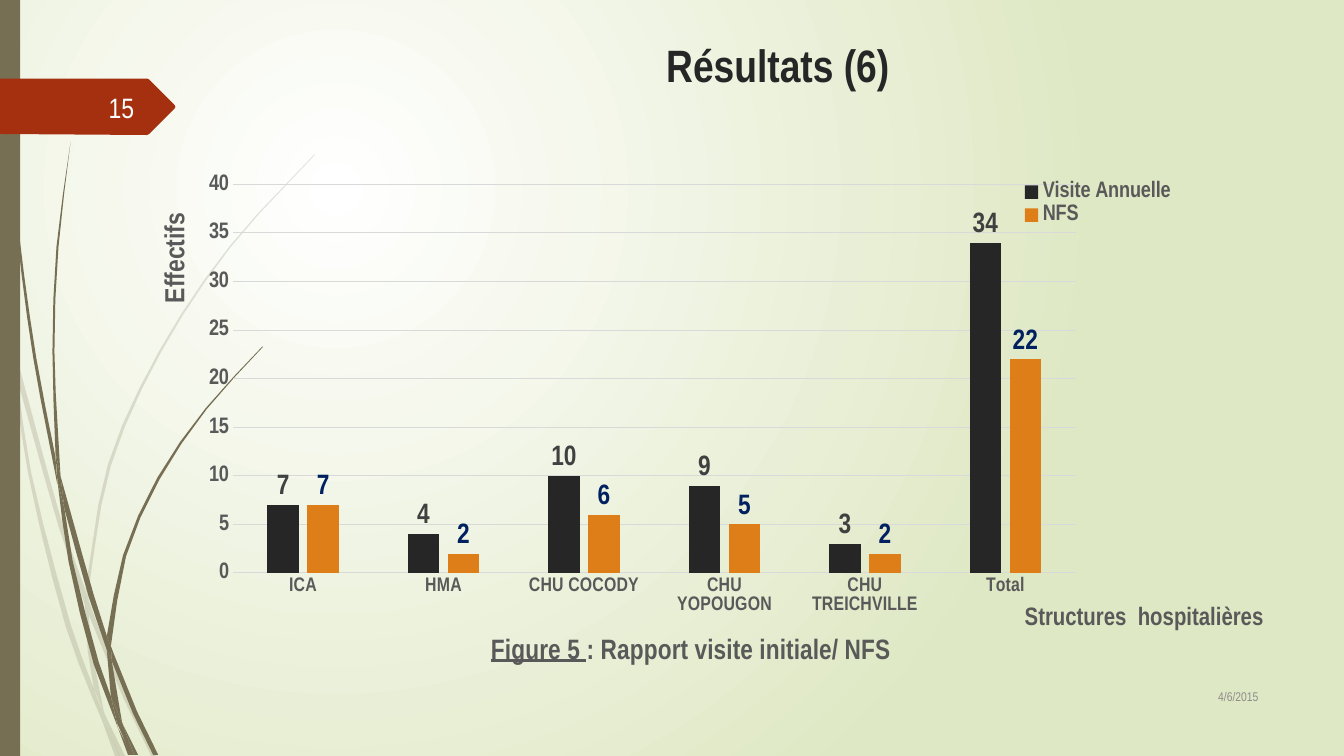
from dataclasses import dataclass
from math import hypot

from lxml import etree
from pptx import Presentation
from pptx import util as u
from pptx.chart import data as cd
from pptx.dml.color import RGBColor
from pptx.enum import chart as ch, shapes, text
from pptx.oxml import ns

FONT = "Arial Narrow"
WHITE = RGBColor(0xFF, 0xFF, 0xFF)
PALE_GREEN = RGBColor(0xDF, 0xE8, 0xC4)
OLIVE = RGBColor(0x76, 0x6F, 0x54)
RED = RGBColor(0xA5, 0x30, 0x10)
INK = RGBColor(0x26, 0x26, 0x26)
ORANGE = RGBColor(0xDE, 0x7E, 0x18)
NAVY = RGBColor(0x00, 0x20, 0x60)
DARK_GREY = RGBColor(0x40, 0x40, 0x40)
GREY = RGBColor(0x59, 0x59, 0x59)
DATE_GREY = RGBColor(0x8C, 0x8C, 0x8C)
GRID = RGBColor(0xD9, 0xD9, 0xD9)

Points = list[tuple[float, float]]


@dataclass
class Strand:
    """A blade of grass: one edge going out, the other coming back."""
    out: Points
    back: Points


@dataclass
class Label:
    text: str
    box: tuple[float, float, float, float]
    size: float
    color: RGBColor
    bold: bool
    align: text.PP_ALIGN
    anchor: text.MSO_ANCHOR
    top_inset: float = 0.05


@dataclass
class BarSeries:
    name: str
    values: tuple[int, ...]
    fill: RGBColor
    label: RGBColor


PALE_STRANDS = [
    Strand([(0.11, 3.5), (0.09, 3.22), (0, 2.82)], [(0, 2.99), (0.1, 3.44)]),
    Strand([(0.17, 3.76), (0.58, 5.22), (0.84, 5.99)], [(0.85, 5.86), (0.62, 5.2), (0.14, 3.45)]),
    Strand([(0.88, 6.1), (1.23, 6.94), (1.5, 7.5)],
           [(1.55, 7.5), (1.27, 6.92), (0.92, 6.07), (0.88, 5.96)]),
    Strand([(1.19, 7.5)], [(1.24, 7.5), (1.05, 7.11)]),
    Strand([(0.11, 3.5), (0.28, 4.7), (0.65, 6.21), (0.92, 6.93), (1.01, 7.14)],
           [(0.93, 6.83), (0.7, 6.19), (0.31, 4.69), (0.17, 3.76)]),
    Strand([(0.84, 5.99), (0.87, 6.46), (0.93, 6.83), (1.05, 7.11)],
           [(1.03, 7.06), (0.91, 6.46), (0.88, 6.1)]),
    Strand([(0.88, 5.96), (0.88, 5.84), (1.1, 4.62), (1.6, 3.49), (2.29, 2.45), (3.12, 1.54)],
           [(3.12, 1.53), (2.28, 2.44), (1.58, 3.48), (1.07, 4.61), (0.85, 5.84)]),
    Strand([(1.01, 7.14), (1.14, 7.5)], [(1.19, 7.5)]),
    Strand([(0.84, 5.99), (0.88, 6.1)], [(0.88, 5.96), (0.85, 5.86)]),
    Strand([(0.93, 6.83), (1.01, 7.14), (1.19, 7.5)], [(1.05, 7.11), (0.96, 6.92)]),
]
DARK_STRANDS = [
    Strand([(0.03, 0), (0.07, 1.1), (0.17, 2.33), (0.33, 3.55), (0.57, 4.81)],
           [(0.55, 4.53), (0.36, 3.55), (0.19, 2.32), (0.08, 1.09), (0.04, 0)]),
    Strand([(0.64, 5.05), (0.88, 5.92), (1.06, 6.45)], [(1.06, 6.31), (0.93, 5.9), (0.6, 4.72)]),
    Strand([(1.1, 6.41), (1.11, 6.56), (1.32, 7.08), (1.52, 7.49)],
           [(1.57, 7.49), (1.36, 7.06), (1.13, 6.49)]),
    Strand([(0.57, 4.77), (0.68, 5.57), (0.93, 6.59), (1.17, 7.22)],
           [(1.1, 6.91), (0.98, 6.57), (0.72, 5.56), (0.64, 5.05)]),
    Strand([(0.6, 4.72), (0.54, 3.49), (0.58, 2.45), (0.7, 1.41)],
           [(0.7, 1.41), (0.56, 2.45), (0.52, 3.49), (0.55, 4.49)]),
    Strand([(1.33, 7.49)], [(1.37, 7.49), (1.22, 7.19)]),
    Strand([(0.57, 4.77), (0.64, 5.05)], [(0.6, 4.72), (0.55, 4.49)]),
    Strand([(1.1, 6.41), (1.25, 5.52), (1.58, 4.76), (2.05, 4.06), (2.61, 3.44)],
           [(2.6, 3.44), (2.04, 4.05), (1.56, 4.74), (1.22, 5.51), (1.06, 6.31)]),
    Strand([(1.17, 7.22), (1.27, 7.49)], [(1.31, 7.49)]),
    Strand([(1.06, 6.45), (1.1, 6.91), (1.22, 7.19)], [(1.21, 7.16), (1.11, 6.56)]),
    Strand([(1.06, 6.45), (1.11, 6.56)], [(1.1, 6.41), (1.06, 6.31)]),
    Strand([(1.1, 6.91), (1.16, 7.17), (1.3, 7.49)], [(1.33, 7.49), (1.22, 7.19)]),
]
TAG = [(0, 0.78), (1.46, 0.78), (1.48, 0.79), (1.73, 1.04), (1.74, 1.06), (1.73, 1.08),
       (1.48, 1.33), (1.46, 1.34), (0, 1.33)]
LABELS = [
    Label("Résultats (6)", (2.84, 0.28, 9.75, 0.58), 32.4, INK, True,
          text.PP_ALIGN.CENTER, text.MSO_ANCHOR.TOP, 0.09),
    Label("4/6/2015", (11.33, 6.7, 1.25, 0.41), 9, DATE_GREY, False,
          text.PP_ALIGN.RIGHT, text.MSO_ANCHOR.MIDDLE),
    Label("15", (0.58, 0.86, 0.85, 0.4), 20, WHITE, False,
          text.PP_ALIGN.RIGHT, text.MSO_ANCHOR.MIDDLE),
]
HOSPITALS = ["ICA", "HMA", "CHU COCODY", "CHU YOPOUGON", "CHU TREICHVILLE", "Total"]
SERIES = [BarSeries("Visite Annuelle", (7, 4, 10, 9, 3, 34), INK, DARK_GREY),
          BarSeries("NFS", (7, 2, 6, 5, 2, 22), ORANGE, NAVY)]


def assign(obj, **values) -> None:
    for name, value in values.items():
        setattr(obj, name, value)


def style(font, size: float, color: RGBColor, bold: bool = True) -> None:
    assign(font, name=FONT, size=u.Pt(size), bold=bold)
    font.color.rgb = color


def smooth(pts: Points, step: float = 0.45) -> Points:
    """Run a smooth curve through the points, with more steps on longer spans."""
    slopes = []
    for i in range(len(pts)):
        (ax, ay), (bx, by) = pts[max(i - 1, 0)], pts[min(i + 1, len(pts) - 1)]
        span = hypot(bx - ax, by - ay) or 1
        slopes.append(((bx - ax) / span, (by - ay) / span))
    curve = [pts[0]]
    for p, q, m, n in zip(pts, pts[1:], slopes, slopes[1:]):
        size = hypot(q[0] - p[0], q[1] - p[1])
        steps = max(1, round(size / step))
        for t in (k / steps for k in range(1, steps + 1)):
            h = 3 * t**2 - 2 * t**3
            g, k = size * (t**3 - 2 * t**2 + t), size * (t**3 - t**2)
            curve.append(tuple(p[d] * (1 - h) + q[d] * h + m[d] * g + n[d] * k for d in (0, 1)))
    return curve


def paint(sp, color: RGBColor, alpha: int = 100) -> None:
    sp.shadow.inherit = False
    sp.fill.solid()
    sp.fill.fore_color.rgb = color
    sp.line.fill.background()
    if alpha < 100:
        rgb = sp._element.spPr.find(".//" + ns.qn("a:srgbClr"))
        etree.SubElement(rgb, ns.qn("a:alpha"), val=str(alpha * 1000))


def add_outline(parent, pts: Points, color: RGBColor, alpha: int = 100) -> None:
    emu = [(u.Inches(x), u.Inches(y)) for x, y in pts]
    builder = parent.build_freeform(*emu[0])
    builder.add_line_segments(emu[1:], close=True)
    paint(builder.convert_to_shape(), color, alpha)


def add_label(slide, label: Label) -> None:
    tf = slide.shapes.add_textbox(*map(u.Inches, label.box)).text_frame
    assign(tf, word_wrap=True, vertical_anchor=label.anchor, margin_top=u.Inches(label.top_inset))
    p = tf.paragraphs[0]
    p.alignment = label.align
    r = p.add_run()
    r.text = label.text
    style(r.font, label.size, label.color, label.bold)


def place(element, **layout: float) -> None:
    """Give a chart part a fixed layout, in fractions of the chart."""
    for old in element.findall(ns.qn("c:layout")):
        element.remove(old)
    box = etree.Element(ns.qn("c:layout"))
    manual = etree.SubElement(box, ns.qn("c:manualLayout"))
    overlay = element.find(ns.qn("c:overlay"))
    if overlay is None:
        etree.SubElement(manual, ns.qn("c:layoutTarget"), val="inner")
    for tag in ("xMode", "yMode"):
        etree.SubElement(manual, ns.qn("c:" + tag), val="edge")
    for tag, value in layout.items():
        etree.SubElement(manual, ns.qn("c:" + tag), val=str(value))
    (element[0] if overlay is None else overlay).addprevious(box)


def add_title(title, words: list[str], size: float, x: float, y: float, turn: int = 0) -> None:
    tf = title.text_frame
    tf._txBody.bodyPr.set("rot", str(turn * 60000))
    for i, word in enumerate(words):
        r = tf.paragraphs[0].add_run()
        r.text = word
        style(r.font, size, GREY)
        if i < len(words) - 1:
            r.font.underline = True
    place(title._element, x=x, y=y)


def add_visits_chart(slide) -> None:
    data = cd.CategoryChartData()
    data.categories = HOSPITALS
    for s in SERIES:
        data.add_series(s.name, s.values)
    box = map(u.Inches, (1.43, 1.45, 11.15, 5.43))
    chart = slide.shapes.add_chart(ch.XL_CHART_TYPE.COLUMN_CLUSTERED, *box, data).chart
    style(chart.font, 10, GREY, False)
    plot = chart.plots[0]
    assign(plot, gap_width=219, overlap=-27, vary_by_categories=False)
    for bars, s in zip(plot.series, SERIES):
        bars.format.fill.solid()
        bars.format.fill.fore_color.rgb = s.fill
        assign(bars.data_labels, show_value=True, position=ch.XL_LABEL_POSITION.OUTSIDE_END)
        style(bars.data_labels.font, 20, s.label)
    # Axes
    cat, val = chart.category_axis, chart.value_axis
    assign(val, minimum_scale=0, maximum_scale=40, major_unit=5)
    for axis, size in ((cat, 14), (val, 16)):
        axis.major_tick_mark = ch.XL_TICK_MARK.NONE
        style(axis.tick_labels.font, size, GREY)
    for line in (cat.format.line, val.major_gridlines.format.line):
        line.color.rgb, line.width = GRID, u.Pt(0.75)
    val.format.line.fill.background()
    # Titles, legend and plot area
    add_title(chart.chart_title, ["Figure 5 ", ": Rapport visite initiale/ NFS"], 20, 0.31, 0.89)
    add_title(cat.axis_title, ["Structures  hospitalières"], 18, 0.79, 0.83)
    add_title(val.axis_title, ["Effectifs"], 20, 0.01, 0.11, -90)
    chart.has_legend = True
    assign(chart.legend, position=ch.XL_LEGEND_POSITION.BOTTOM, include_in_layout=False)
    style(chart.legend.font, 16, GREY)
    place(chart.legend._element, x=0.79, y=0.06, w=0.14, h=0.09)
    place(chart._chartSpace.chart.plotArea, x=0.08, y=0.07, w=0.76, h=0.71)


def main() -> None:
    prs = Presentation()
    assign(prs, slide_width=u.Inches(13.33), slide_height=u.Inches(7.5))
    slide = prs.slides.add_slide(prs.slide_layouts[6])
    # Background glow
    fill = slide.background.fill
    fill.gradient()
    for stop, color in zip(fill.gradient_stops, (WHITE, PALE_GREEN)):
        stop.color.rgb = color
    lin = slide._element.find(".//" + ns.qn("a:lin"))
    glow = etree.Element(ns.qn("a:path"), {"path": "circle"})
    etree.SubElement(glow, ns.qn("a:fillToRect"), l="50000", t="50000", r="100000", b="100000")
    lin.getparent().replace(lin, glow)
    # Grass, side bar and number tag
    for strands, alpha in ((PALE_STRANDS, 20), (DARK_STRANDS, 100)):
        group = slide.shapes.add_group_shape()
        for s in strands:
            add_outline(group.shapes, smooth(s.out) + smooth(s.back), OLIVE, alpha)
    bar = map(u.Inches, (0, 0, 0.2, 7.5))
    paint(slide.shapes.add_shape(shapes.MSO_SHAPE.RECTANGLE, *bar), OLIVE)
    add_outline(slide.shapes, TAG, RED)
    # Texts and chart
    for label in LABELS:
        add_label(slide, label)
    add_visits_chart(slide)
    prs.save("out.pptx")


if __name__ == "__main__":
    main()
